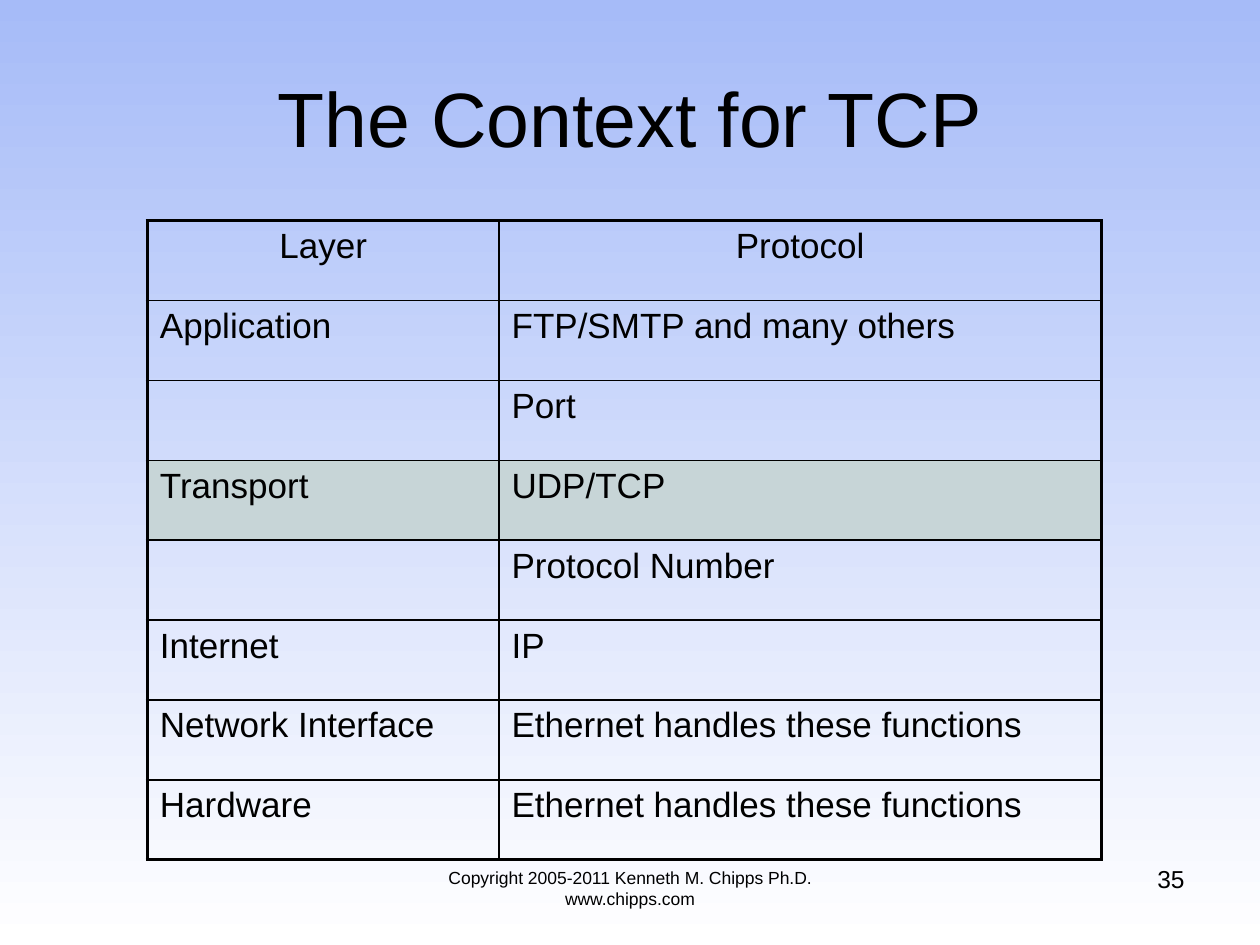
from lxml import etree
from pptx import Presentation
from pptx import util as u
from pptx.dml.color import RGBColor
from pptx.enum import text
from pptx.oxml import ns

THEME = {
    "font": "Arial",
    "ink": RGBColor.from_string("000000"),
    "sky": RGBColor.from_string("A6BBF8"),
    "white": RGBColor.from_string("FFFFFF"),
    "highlight": RGBColor.from_string("C7D5D7"),
    "title": u.Pt(44),
    "table": u.Pt(20),
    "number": u.Pt(14),
    "footer": u.Pt(10),
    "outer_line": u.Pt(2.25),
    "inner_line": u.Pt(1),
}
ALIGN = text.PP_ALIGN
ROWS = [
    ("Layer", "Protocol"),
    ("Application", "FTP/SMTP and many others"),
    ("", "Port"),
    ("Transport", "UDP/TCP"),
    ("", "Protocol Number"),
    ("Internet", "IP"),
    ("Network Interface", "Ethernet handles these functions"),
    ("Hardware", "Ethernet handles these functions"),
]
HIGHLIGHTED_ROW = 3
COLUMN_WIDTHS = [u.Cm(7.09), u.Cm(12.14)]
ROW_HEIGHT = u.Cm(1.61)


def write(frame, words, size, align):
    frame.text = words
    paragraph = frame.paragraphs[0]
    paragraph.alignment = align
    font = paragraph.font
    for name, value in {"name": THEME["font"], "size": THEME[size]}.items():
        setattr(font, name, value)
    font.color.rgb = THEME["ink"]
    return paragraph


def add_border(cell, side, width):
    """Draw one side (L, R, T or B) of a cell; call in that order."""
    properties = cell._tc.get_or_add_tcPr()
    line = etree.SubElement(properties, ns.qn(f"a:ln{side}"), w=str(int(width)))
    fill = etree.SubElement(line, ns.qn("a:solidFill"))
    etree.SubElement(fill, ns.qn("a:srgbClr"), val=str(THEME["ink"]))


presentation = Presentation()
presentation.slide_width = u.Cm(25.4)
presentation.slide_height = u.Cm(19.05)
slide = presentation.slides.add_slide(presentation.slide_layouts[5])

# Background
background = slide.background.fill
background.gradient()
background.gradient_angle = 270
for stop, color, position in zip(background.gradient_stops, ("sky", "white"), (0, 1)):
    stop.color.rgb = THEME[color]
    stop.position = position

# Title
title = slide.shapes.title
for name, value in {"left": u.Cm(1.27), "top": u.Cm(0.76),
                    "width": u.Cm(22.86), "height": u.Cm(3.18)}.items():
    setattr(title, name, value)
write(title.text_frame, "The Context for TCP", "title", ALIGN.CENTER)
title.text_frame.vertical_anchor = text.MSO_ANCHOR.MIDDLE

# Layer table
table = slide.shapes.add_table(
    len(ROWS), len(COLUMN_WIDTHS), u.Cm(2.97), u.Cm(4.45),
    sum(COLUMN_WIDTHS), ROW_HEIGHT * len(ROWS)).table
table.first_row = table.horz_banding = False
for column, width in zip(table.columns, COLUMN_WIDTHS):
    column.width = width
last_row, last_column = len(ROWS) - 1, len(COLUMN_WIDTHS) - 1
for r, row in enumerate(ROWS):
    table.rows[r].height = ROW_HEIGHT
    for c, words in enumerate(row):
        cell = table.cell(r, c)
        align = ALIGN.CENTER if r == 0 else ALIGN.LEFT
        paragraph = write(cell.text_frame, words, "table", align)
        paragraph.space_before = THEME["table"] // 5
        outer_sides = {"L": c == 0, "R": c == last_column,
                       "T": r == 0, "B": r == last_row}
        for side, is_outer in outer_sides.items():
            add_border(cell, side, THEME["outer_line" if is_outer else "inner_line"])
        if r == HIGHLIGHTED_ROW:
            cell.fill.solid()
            cell.fill.fore_color.rgb = THEME["highlight"]
        else:
            cell.fill.background()

# Footer and slide number
for words, size, align, left, top, width in [
    ("Copyright 2005-2011 Kenneth M. Chipps Ph.D. www.chipps.com",
     "footer", ALIGN.CENTER, 7.62, 17.35, 10.16),
    ("35", "number", ALIGN.RIGHT, 18.2, 17.3, 5.93),
]:
    box = slide.shapes.add_textbox(u.Cm(left), u.Cm(top), u.Cm(width), u.Cm(1.32))
    box.text_frame.word_wrap = True
    write(box.text_frame, words, size, align)

presentation.save("out.pptx")
